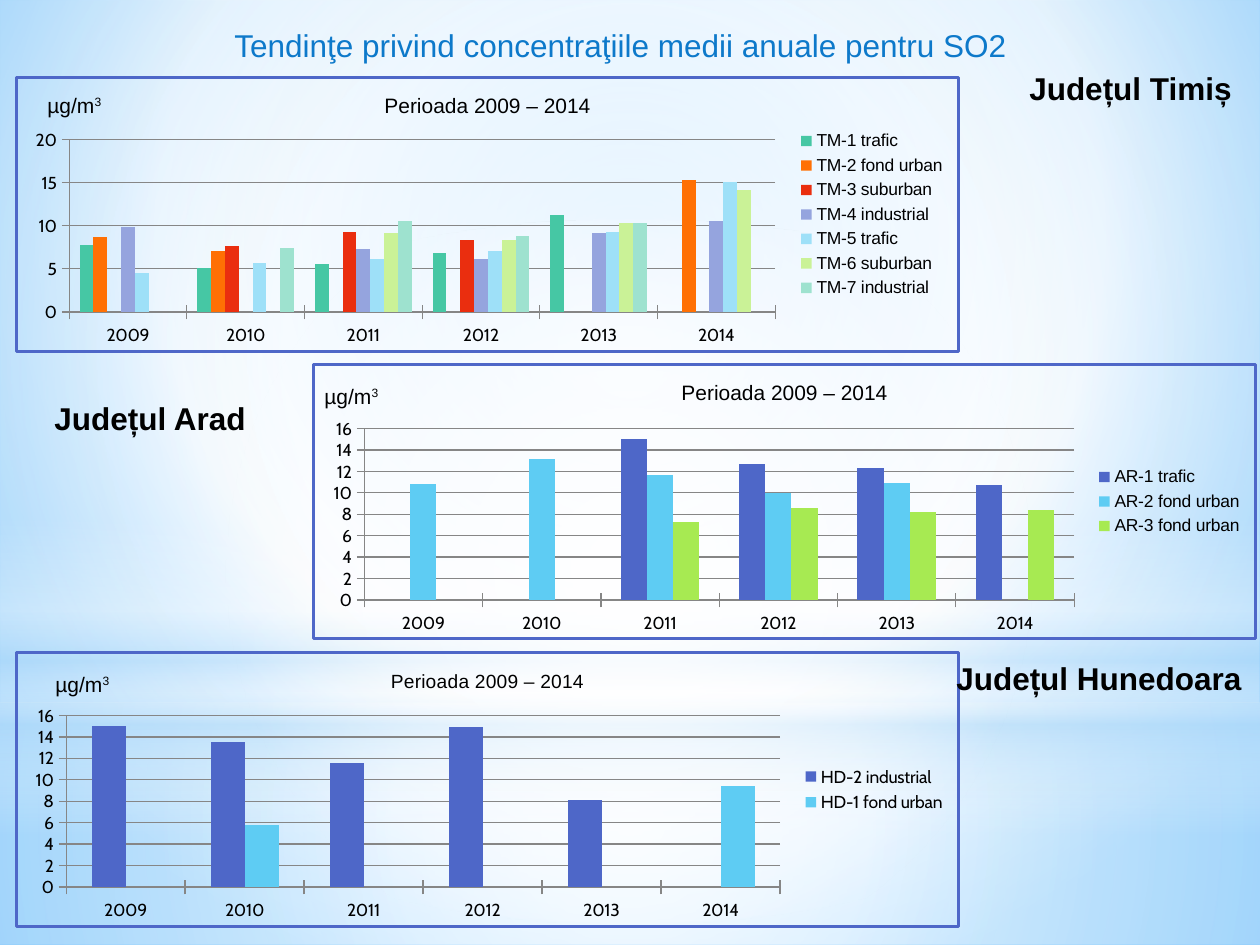
import pptx
import pptx.chart.data
import pptx.dml.color
import pptx.enum.chart
import pptx.enum.shapes
import pptx.enum.text
import pptx.oxml
import pptx.oxml.ns
import pptx.util

PX = 914400 / 126
NS = pptx.oxml.ns.nsdecls("a", "c")
RGB = pptx.dml.color.RGBColor.from_string
THEME = {
    "title": "0D79CA", "text": "000000", "border": "4E67C8", "grid": "868686",
    "blue": "4E67C8", "sky": "5ECCF3", "lime": "A7EA52",
    "teal": "5DCEAF", "orange": "FF8021", "red": "F14124",
    "font": "Arial", "chart_font": "Cabin",
    "heading_size": 18, "unit_size": 12, "chart_size": 10, "border_width": 1.5,
}


def gradient(stops, focus=None):
    """Radial gradient round focus (left, top, right, bottom %), else top to bottom."""
    marks = "".join(
        f'<a:gs pos="{pos * 1000}"><a:srgbClr val="{color}">'
        f'<a:alpha val="{alpha * 1000}"/></a:srgbClr></a:gs>'
        for pos, color, alpha in stops)
    direction = '<a:lin ang="5400000" scaled="0"/>'
    if focus:
        left, top, right, bottom = (side * 1000 for side in focus)
        direction = (f'<a:path path="circle"><a:fillToRect l="{left}" t="{top}" '
                     f'r="{right}" b="{bottom}"/></a:path>')
    return pptx.oxml.parse_xml(
        f'<a:gradFill {NS} rotWithShape="1"><a:gsLst>{marks}</a:gsLst>{direction}</a:gradFill>')


def style(font, size, color=THEME["text"], bold=False, name=THEME["font"]):
    font.name = name
    font.size = pptx.util.Pt(size)
    font.bold = bold
    font.color.rgb = RGB(color)


deck = pptx.Presentation()
deck.slide_width, deck.slide_height = round(1260 * PX), round(945 * PX)
slide = deck.slides.add_slide(deck.slide_layouts[5])
title = slide.shapes.title

# Background and its soft light layers, kept behind the title
backdrop = slide.background.fill
backdrop.gradient()
plain_gradient = slide.background._cSld.find(".//" + pptx.oxml.ns.qn("a:gradFill"))
plain_gradient.getparent().replace(plain_gradient, gradient(
    [(0, "9ED5FF", 100), (60, "FFFFFF", 100), (100, "5BB9FF", 100)], (20, 10, 20, 60)))

PRESET = pptx.enum.shapes.MSO_SHAPE
CENTRE = (50, 50, 50, 50)
light_layers = [
    (PRESET.RECTANGLE, 703, 242, CENTRE,
     [(0, "FFFFFF", 91), (37, "FFFFFF", 76), (100, "B4DCFA", 79)]),
    (PRESET.RECTANGLE, 0, 703, CENTRE,
     [(0, "FFFFFF", 89), (48, "FFFFFF", 62), (100, "B4DCFA", 79)]),
    (PRESET.RECTANGLE, 519, 315, None,
     [(0, "FFFFFF", 0), (29, "FFFFFF", 30), (45, "B4DCFA", 40),
      (55, "FFFFFF", 26), (65, "B4DCFA", 60), (100, "FFFFFF", 0)]),
    (PRESET.OVAL, 220, 703, CENTRE, [(0, "FFFFFF", 100), (56, "FFFFFF", 0)]),
]
for preset, top, height, focus, stops in light_layers:
    layer = slide.shapes.add_shape(preset, 0, round(top * PX), deck.slide_width, round(height * PX))
    layer.shadow.inherit = False
    layer.line.fill.background()
    layer._element.spPr.find(pptx.oxml.ns.qn("a:prstGeom")).addnext(gradient(stops, focus))
    title._element.addprevious(layer._element)

# Title
title.left, title.top, title.width, title.height = (round(n * PX) for n in (15, 20, 1211, 51))
title.text_frame.text = "Tendinţe privind concentraţiile medii anuale pentru SO2"
title.text_frame.vertical_anchor = pptx.enum.text.MSO_ANCHOR.TOP
title.text_frame.paragraphs[0].alignment = pptx.enum.text.PP_ALIGN.CENTER
style(title.text_frame.paragraphs[0].runs[0].font, THEME["heading_size"], THEME["title"])

# County charts: (left, top), plot area inside the chart, axis, title size, legend font, series
CHART_W, CHART_H = 945, 277
YEARS = ["2009", "2010", "2011", "2012", "2013", "2014"]
counties = [
    ((15, 76), (53, 63, 708, 174), (20, 5), 12, THEME["font"], [
        ("TM-1 trafic", "teal", -0.1, (7.8, 5.1, 5.6, 6.8, 11.2, None)),
        ("TM-2 fond urban", "orange", -0.1, (8.7, 7.1, None, None, None, 15.3)),
        ("TM-3 suburban", "red", -0.1, (None, 7.6, 9.3, 8.4, None, None)),
        ("TM-4 industrial", "blue", 0.4, (9.8, None, 7.3, 6.1, 9.1, 10.6)),
        ("TM-5 trafic", "sky", 0.4, (4.5, 5.7, 6.1, 7.1, 9.3, 15.1)),
        ("TM-6 suburban", "lime", 0.4, (None, None, 9.1, 8.4, 10.3, 14.1)),
        ("TM-7 industrial", "teal", 0.4, (None, 7.4, 10.6, 8.8, 10.3, None)),
    ]),
    ((312, 363), (51, 65, 712, 173), (16, 2), 12, THEME["font"], [
        ("AR-1 trafic", "blue", 0, (None, None, 15, 12.7, 12.3, 10.7)),
        ("AR-2 fond urban", "sky", 0, (10.8, 13.2, 11.7, 10, 10.9, None)),
        ("AR-3 fond urban", "lime", 0, (None, None, 7.3, 8.6, 8.2, 8.4)),
    ]),
    ((15, 651), (50, 64, 716, 173), (16, 2), 11, THEME["chart_font"], [
        ("HD-2 industrial", "blue", 0, (15, 13.5, 11.6, 14.9, 8.1, None)),
        ("HD-1 fond urban", "sky", 0, (None, 5.8, None, None, None, 9.4)),
    ]),
]
for (left, top), plot_box, (peak, step), title_size, legend_font, stations in counties:
    readings = pptx.chart.data.CategoryChartData()
    readings.categories = YEARS
    for station, _, _, values in stations:
        readings.add_series(station, values)
    chart = slide.shapes.add_chart(
        pptx.enum.chart.XL_CHART_TYPE.COLUMN_CLUSTERED,
        *(round(n * PX) for n in (left, top, CHART_W, CHART_H)), readings).chart
    style(chart.font, THEME["chart_size"], name=THEME["chart_font"])

    chart.has_title = True
    chart.chart_title.text_frame.text = "Perioada 2009 – 2014"
    style(chart.chart_title.text_frame.paragraphs[0].runs[0].font, title_size)
    chart.chart_title.include_in_layout = False
    chart.has_legend = True
    chart.legend.position = pptx.enum.chart.XL_LEGEND_POSITION.RIGHT
    chart.legend.include_in_layout = False
    style(chart.legend.font, THEME["chart_size"], name=legend_font)

    # Columns
    columns = chart.plots[0]
    columns.vary_by_categories = False
    columns.gap_width, columns.overlap = 150, 0
    for series, (_, color, brightness, _) in zip(columns.series, stations):
        series.format.fill.solid()
        series.format.fill.fore_color.rgb = RGB(THEME[color])
        if brightness:
            series.format.fill.fore_color.brightness = brightness

    # Axes and grid
    value_axis = chart.value_axis
    value_axis.minimum_scale, value_axis.maximum_scale, value_axis.major_unit = 0, peak, step
    value_axis.has_major_gridlines = True
    for axis in (chart.category_axis, value_axis):
        axis.major_tick_mark = pptx.enum.chart.XL_TICK_MARK.CROSS
    for rule in (chart.category_axis, value_axis, value_axis.major_gridlines):
        rule.format.line.color.rgb = RGB(THEME["grid"])
        rule.format.line.width = pptx.util.Pt(0.75)

    # Plot position and chart border
    plot_area = chart._chartSpace.chart.plotArea
    for automatic in plot_area.findall(pptx.oxml.ns.qn("c:layout")):
        plot_area.remove(automatic)
    shares = "".join(
        f'<c:{key} val="{n / whole:.4f}"/>'
        for key, n, whole in zip("xywh", plot_box, (CHART_W, CHART_H) * 2))
    plot_area.insert(0, pptx.oxml.parse_xml(
        f'<c:layout {NS}><c:manualLayout><c:layoutTarget val="inner"/>'
        f'<c:xMode val="edge"/><c:yMode val="edge"/>{shares}</c:manualLayout></c:layout>'))
    chart._chartSpace.chart.addnext(pptx.oxml.parse_xml(
        f'<c:spPr {NS}><a:noFill/><a:ln w="{pptx.util.Pt(THEME["border_width"])}"><a:solidFill>'
        f'<a:srgbClr val="{THEME["border"]}"/></a:solidFill></a:ln></c:spPr>'))

# Units and county names: place, text, superscript, size, bold
UNIT = ("µg/m", "3", THEME["unit_size"], False)
labels = [
    ((35, 86, 81, 38), *UNIT),
    ((312, 377, 81, 38), *UNIT),
    ((43, 665, 81, 38), *UNIT),
    ((1017, 63, 229, 51), "Județul Timiș", "", THEME["heading_size"], True),
    ((42, 393, 219, 51), "Județul Arad", "", THEME["heading_size"], True),
    ((944, 653, 314, 51), "Județul Hunedoara", "", THEME["heading_size"], True),
]
for place, words, superscript, size, bold in labels:
    label = slide.shapes.add_textbox(*(round(n * PX) for n in place)).text_frame
    label.word_wrap = False
    label.auto_size = pptx.enum.text.MSO_AUTO_SIZE.SHAPE_TO_FIT_TEXT
    label.text = words
    if superscript:
        raised = label.paragraphs[0].add_run()
        raised.text = superscript
        raised.font._element.set("baseline", "30000")
    for run in label.paragraphs[0].runs:
        style(run.font, size, bold=bold)

deck.save("out.pptx")
